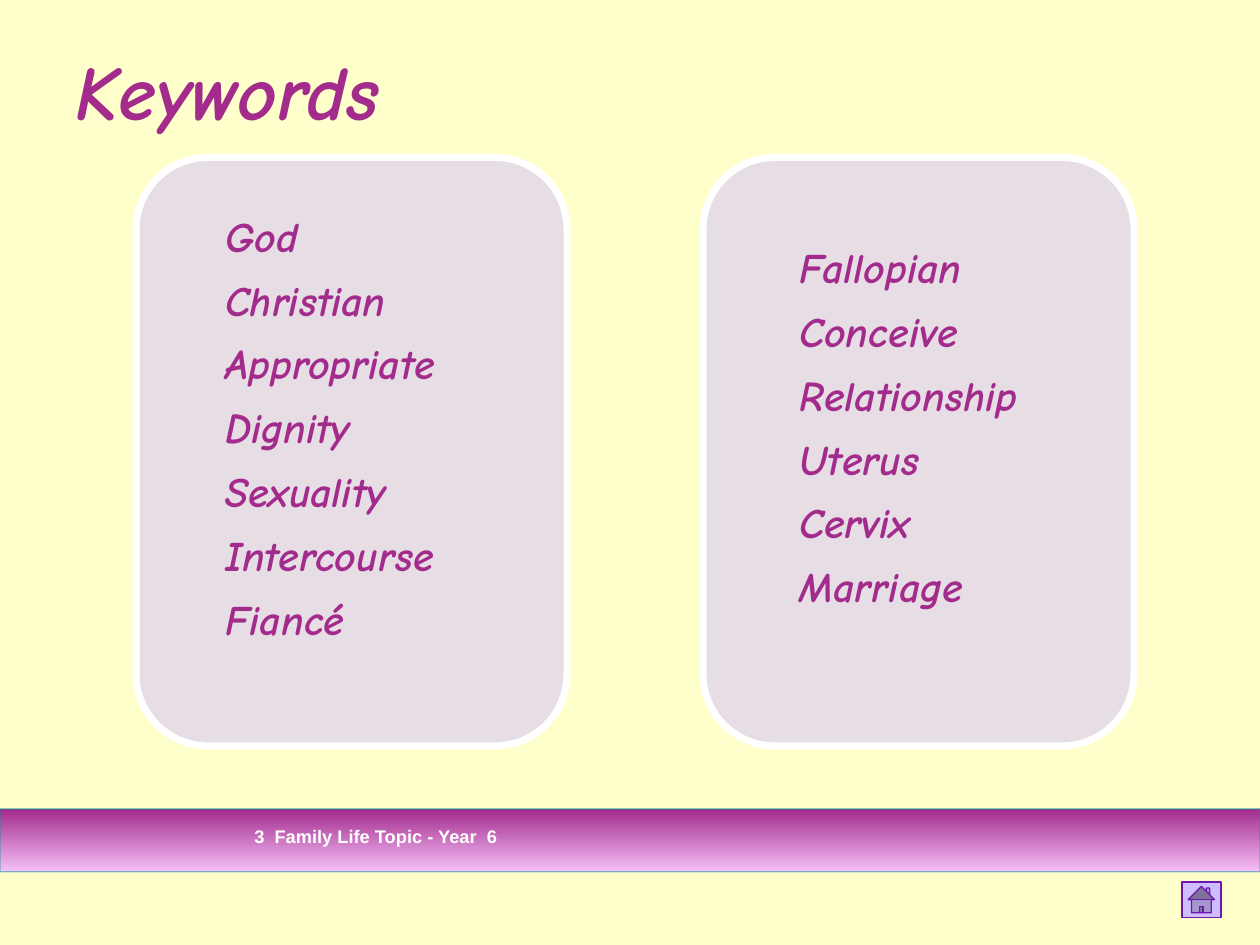
from dataclasses import dataclass

from lxml.etree import SubElement
from pptx import Presentation
from pptx.dml.color import RGBColor
from pptx.enum.dml import MSO_LINE
from pptx.enum.shapes import MSO_SHAPE
from pptx.enum.text import MSO_ANCHOR
from pptx.oxml.ns import qn
from pptx.shapes.autoshape import Shape
from pptx.slide import Slide
from pptx.text.text import Font
from pptx.util import Inches, Pt

COLORS = {
    "background": "FFFFCC",
    "plum": "A32B8C",
    "pink": "F5C0F8",
    "lilac": "CFBDFF",
    "violet": "6C18B0",
    "teal": "009999",
    "white": "FFFFFF",
}
SCRIPT_FONT = "Comic Neue"
PANEL_TOP, PANEL_WIDTH, PANEL_HEIGHT = 1.25, 3.42, 4.67


@dataclass(frozen=True)
class Area:
    left: float
    top: float
    width: float
    height: float

    def lengths(self) -> list[Inches]:
        return [Inches(n) for n in (self.left, self.top, self.width, self.height)]


@dataclass(frozen=True)
class KeywordPanel:
    left: float
    text_area: Area
    words: tuple[str, ...]


PANELS = (
    KeywordPanel(
        1.08,
        Area(1.69, 1.58, 2.31, 4),
        ("God", "Christian", "Appropriate", "Dignity", "Sexuality",
         "Intercourse", "Fiancé"),
    ),
    KeywordPanel(
        5.58,
        Area(6.25, 1.83, 2.44, 3.75),
        ("Fallopian", "Conceive", "Relationship", "Uterus", "Cervix", "Marriage"),
    ),
)


def color(name: str) -> RGBColor:
    return RGBColor.from_string(COLORS[name])


def set_half_transparent(shape: Shape, fill_tag: str) -> None:
    """Give the solid colour at fill_tag, a path below spPr, 50 % opacity."""
    solid = shape.element.spPr.find(fill_tag)
    SubElement(solid[0], qn("a:alpha"), val="50000")


def add_outlined_shape(
    page: Slide, kind: MSO_SHAPE, area: Area, line: str, line_width: float
) -> Shape:
    shape = page.shapes.add_shape(kind, *area.lengths())
    shape.shadow.inherit = False
    shape.line.color.rgb = color(line)
    shape.line.width = Pt(line_width)
    return shape


def set_font(font: Font, name: str, size: float, color_name: str, italic: bool) -> None:
    font.name = name
    font.size = Pt(size)
    font.bold = True
    font.italic = italic
    font.color.rgb = color(color_name)


def add_text(
    page: Slide, area: Area, lines: tuple[str, ...], size: float,
    font: str = SCRIPT_FONT, color_name: str = "plum", italic: bool = True,
) -> Shape:
    box = page.shapes.add_textbox(*area.lengths())
    frame = box.text_frame
    frame.word_wrap = True
    frame.text = "\n".join(lines)
    for para in frame.paragraphs:
        set_font(para.font, font, size, color_name, italic)
    return box


def add_keyword_panel(page: Slide, panel: KeywordPanel) -> None:
    area = Area(panel.left, PANEL_TOP, PANEL_WIDTH, PANEL_HEIGHT)
    card = add_outlined_shape(page, MSO_SHAPE.ROUNDED_RECTANGLE, area, "white", 4)
    card.fill.solid()
    card.fill.fore_color.rgb = color("lilac")
    set_half_transparent(card, qn("a:solidFill"))

    box = add_text(page, panel.text_area, panel.words, 24)
    for para in box.text_frame.paragraphs:
        para.line_spacing = 1.1
        para.space_before = Pt(4.8)


def add_footer(page: Slide) -> None:
    bar = add_outlined_shape(
        page, MSO_SHAPE.RECTANGLE, Area(0, 6.42, 10, 0.5), "teal", 0.75
    )
    bar.line.dash_style = MSO_LINE.SOLID
    set_half_transparent(bar, f"{qn('a:ln')}/{qn('a:solidFill')}")
    bar.fill.gradient()
    bar.fill.gradient_angle = 270
    for stop, name, position in zip(bar.fill.gradient_stops, ("plum", "pink"), (0, 1)):
        stop.color.rgb = color(name)
        stop.position = position

    label = add_text(
        page, Area(1.92, 6.47, 6.25, 0.37), ("3  Family Life Topic - Year  6",),
        18, "Arial", "white", False,
    )
    span = label.text_frame.paragraphs[0].runs[0]
    span.font._element.set("baseline", "30000")


def add_home_button(page: Slide) -> None:
    button = add_outlined_shape(
        page, MSO_SHAPE.ACTION_BUTTON_HOME, Area(9.38, 7, 0.31, 0.28), "violet", 0.75
    )
    button.fill.solid()
    button.fill.fore_color.rgb = color("lilac")


def main() -> None:
    deck = Presentation()
    deck.slide_width, deck.slide_height = Inches(10), Inches(7.5)
    page = deck.slides.add_slide(deck.slide_layouts[6])
    page.background.fill.solid()
    page.background.fill.fore_color.rgb = color("background")

    add_footer(page)
    for panel in PANELS:
        add_keyword_panel(page, panel)
    title = add_text(page, Area(0.5, 0.25, 9, 0.92), ("Keywords",), 44)
    title.text_frame.vertical_anchor = MSO_ANCHOR.MIDDLE
    add_home_button(page)
    deck.save("out.pptx")


if __name__ == "__main__":
    main()
